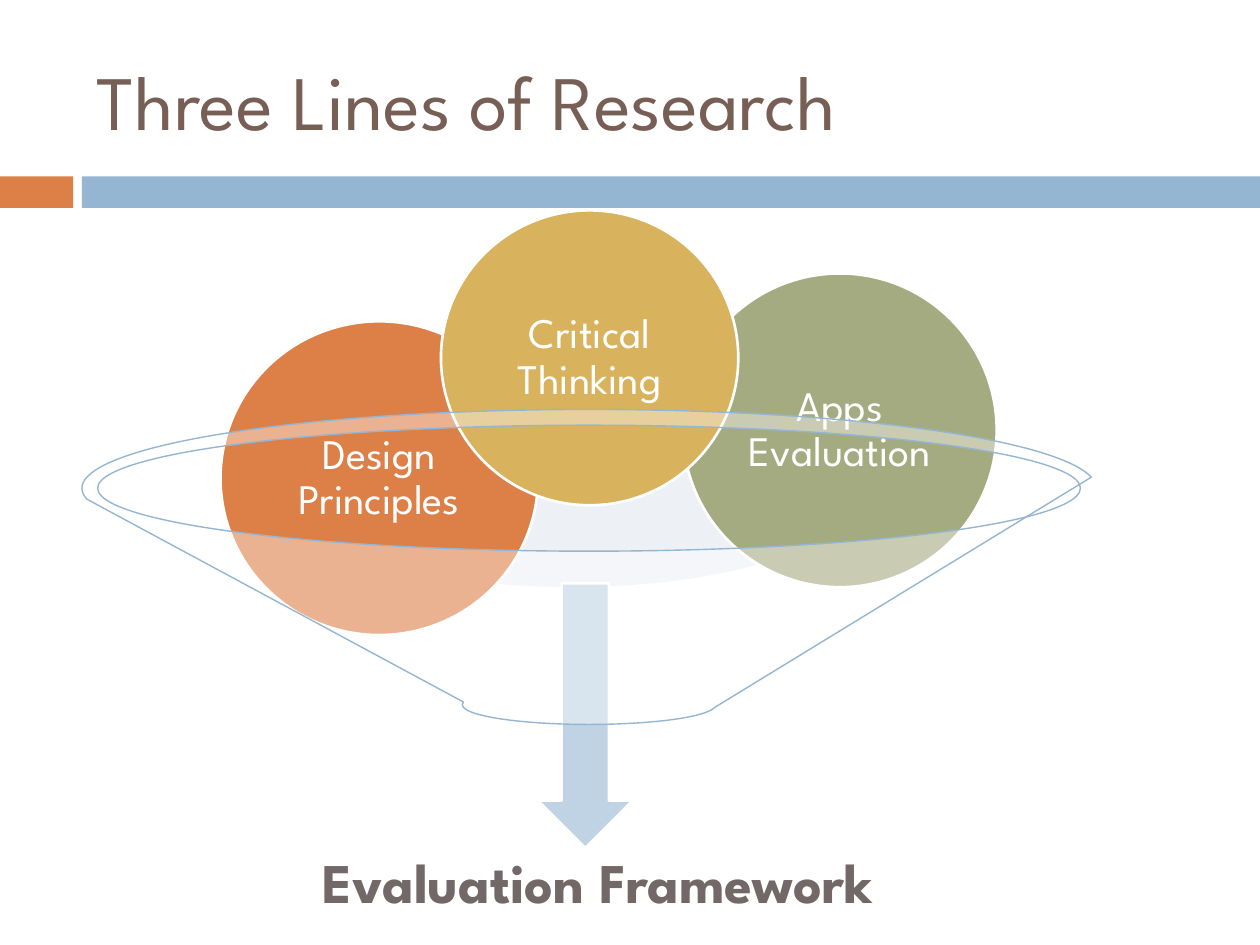
from dataclasses import dataclass

from lxml import etree
from pptx import Presentation
from pptx.dml.color import RGBColor
from pptx.enum.shapes import MSO_SHAPE as Shape
from pptx.enum.text import MSO_ANCHOR as Anchor, PP_ALIGN as Align
from pptx.oxml.ns import qn
from pptx.util import Inches, Pt


@dataclass(frozen=True)
class Theme:
    font: str = "League Spartan"
    title: str = "775F55"
    result: str = "726868"
    white: str = "FFFFFF"
    orange: str = "DD8047"
    blue: str = "94B6D2"
    green: str = "A5AB81"
    gold: str = "D8B25C"
    pool: str = "D2DEEA"
    arrow: str = "BFD3E4"
    title_size: int = 44
    result_size: int = 32
    label_size: int = 24


T = Theme()


def add_shape(s, kind, box, fill, line=None, width=1.5, alpha=None):
    sp = s.shapes.add_shape(kind, *map(Inches, box))
    sp.shadow.inherit = False
    sp.fill.solid()
    sp.fill.fore_color.rgb = RGBColor.from_string(fill)
    if alpha is not None:
        color = sp.fill._xPr.find(qn("a:solidFill"))[0]
        etree.SubElement(color, qn("a:alpha"), val=str(alpha * 1000))
    if line:
        sp.line.color.rgb = RGBColor.from_string(line)
        sp.line.width = Pt(width)
    else:
        sp.line.fill.background()
    return sp


def set_text(sp, text, size, color, inset=None, bold=False, centered=True):
    tf = sp.text_frame
    tf.word_wrap = True
    tf.vertical_anchor = Anchor.MIDDLE
    if inset is not None:
        tf.margin_left = tf.margin_right = Inches(inset)
        tf.margin_top = tf.margin_bottom = Inches(inset)
    p = tf.paragraphs[0]
    p.text = text
    p.font.name, p.font.size, p.font.bold = T.font, Pt(size), bold
    p.font.color.rgb = RGBColor.from_string(color)
    if centered:
        p.alignment = Align.CENTER
        p.line_spacing = 0.9
        p.space_after = Pt(round(size * 0.35))


def add_header(s, x, y, w, h):
    # Title above a two-coloured band
    band_h, tab_w, band_x = 0.25, 0.58, 0.65
    band_y = y + h - band_h
    add_shape(s, Shape.RECTANGLE, (x, band_y, tab_w, band_h), T.orange)
    add_shape(s, Shape.RECTANGLE, (x + band_x, band_y, w - band_x, band_h), T.blue)
    title = s.shapes.add_textbox(*map(Inches, (x + 0.67, y + 0.25, 8.92, 1.08)))
    set_text(title, "Three Lines of Research", T.title_size, T.title, centered=False)


def add_funnel(s, x, y, w, h):
    # Pool and outgoing arrow
    add_shape(s, Shape.OVAL, (x + 1.5, y + 1.33, 4.77, 1.66), T.pool, alpha=40)
    add_shape(s, Shape.DOWN_ARROW, (x + 3.62, y + 2.96, 0.75, 2.1), T.arrow, T.white)

    # Result
    result = s.shapes.add_textbox(*map(Inches, (x + 0.18, y + 4.8, 7.83, 1.11)))
    set_text(result, "Evaluation Framework", T.result_size, T.result, 0.25, bold=True)

    # Research lines falling into the funnel
    lines = [
        ("Design Principles", T.orange, 1.1, 0.88, 2.52, 2.49),
        ("Apps Evaluation", T.green, 4.77, 0.5, 2.49, 2.49),
        ("Critical Thinking", T.gold, 2.85, 0, 2.36, 2.34),
    ]
    for text, color, dx, dy, ball_w, ball_h in lines:
        ball = add_shape(s, Shape.OVAL, (x + dx, y + dy, ball_w, ball_h), color, T.white)
        set_text(ball, text, T.label_size, T.white, 0.03)

    # Translucent funnel in front
    rim = 1.58
    add_shape(s, Shape.FUNNEL, (x, y + rim, w, h - rim), T.white, T.blue, 0.79, alpha=40)


def main():
    prs = Presentation()
    prs.slide_width, prs.slide_height = Inches(10), Inches(7.5)
    s = prs.slides.add_slide(prs.slide_layouts[6])
    add_header(s, 0, 0, 10, 1.65)
    add_funnel(s, 0.65, 1.67, 8.05, 4.08)
    prs.save("out.pptx")


if __name__ == "__main__":
    main()
